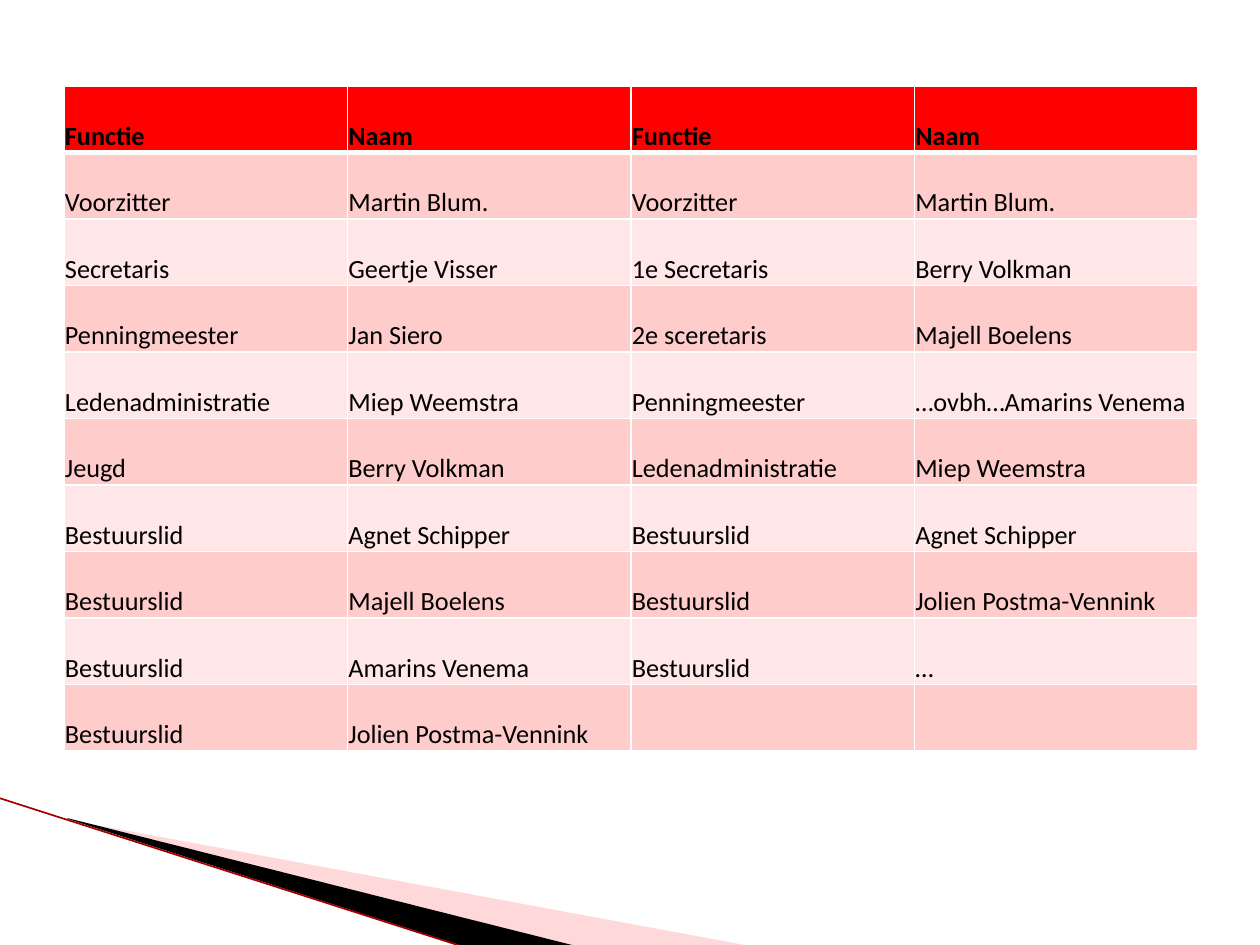
from lxml import etree
from pptx import Presentation
from pptx import util as u
from pptx.dml.color import RGBColor
from pptx.enum import shapes, text
from pptx.oxml import ns

PX = u.Inches(1) // 126
BLACK = RGBColor(0x00, 0x00, 0x00)
RED = RGBColor(0xFF, 0x00, 0x00)
ROSE = RGBColor(0xFF, 0xCC, 0xCC)
PALE_ROSE = RGBColor(0xFF, 0xE7, 0xE7)
WEDGE_PINK = RGBColor(0xFF, 0xA2, 0xA2)
DARK_RED = RGBColor(0xA5, 0x00, 0x00)

BOARD = [
    ("Functie", "Naam", "Functie", "Naam"),
    ("Voorzitter", "Martin Blum.", "Voorzitter", "Martin Blum."),
    ("Secretaris", "Geertje Visser", "1e Secretaris", "Berry Volkman"),
    ("Penningmeester", "Jan Siero", "2e sceretaris", "Majell Boelens"),
    ("Ledenadministratie", "Miep Weemstra", "Penningmeester", "…ovbh…Amarins Venema"),
    ("Jeugd", "Berry Volkman", "Ledenadministratie", "Miep Weemstra"),
    ("Bestuurslid", "Agnet Schipper", "Bestuurslid", "Agnet Schipper"),
    ("Bestuurslid", "Majell Boelens", "Bestuurslid", "Jolien Postma-Vennink"),
    ("Bestuurslid", "Amarins Venema", "Bestuurslid", "…"),
    ("Bestuurslid", "Jolien Postma-Vennink", "", ""),
]


def add_wedge(slide, points, color, opacity=100):
    builder = slide.shapes.build_freeform(*points[0], scale=PX)
    builder.add_line_segments(points[1:], close=True)
    wedge = builder.convert_to_shape()
    wedge.shadow.inherit = False
    wedge.line.fill.background()
    wedge.fill.solid()
    wedge.fill.fore_color.rgb = color
    if opacity < 100:
        tint = wedge.fill._xPr.find(".//" + ns.qn("a:srgbClr"))
        etree.SubElement(tint, ns.qn("a:alpha"), val=str(opacity * 1000))


def add_edge(slide, start, end, color, width):
    ends = [value * PX for value in (*start, *end)]
    edge = slide.shapes.add_connector(shapes.MSO_CONNECTOR.STRAIGHT, *ends)
    edge.line.color.rgb = color
    edge.line.width = u.Pt(width)
    etree.SubElement(edge._element.spPr, ns.qn("a:effectLst"))


def write(frame, words, *, size=15, font="Calibri", color=BLACK, bold=False):
    run = frame.paragraphs[0].add_run()
    run.text = words
    run.font.size = u.Pt(size)
    run.font.name = font
    run.font.color.rgb = color
    run.font.bold = bold


def set_borders(cell, top, bottom):
    """Draw white cell borders; the side borders are 1 pt wide."""
    properties = cell._tc.get_or_add_tcPr()
    widths = {"lnL": 1, "lnR": 1, "lnT": top, "lnB": bottom}
    for position, (side, width) in enumerate(widths.items()):
        border = etree.Element(ns.qn("a:" + side), w=str(u.Pt(width)))
        fill = etree.SubElement(border, ns.qn("a:solidFill"))
        etree.SubElement(fill, ns.qn("a:srgbClr"), val="FFFFFF")
        properties.insert(position, border)


def add_board_table(slide, left, top, width, height):
    frame = slide.shapes.add_table(len(BOARD), len(BOARD[0]), left * PX,
                                   top * PX, width * PX, height * PX)
    for row, entries in enumerate(BOARD):
        is_header = row == 0
        band = RED if is_header else ROSE if row % 2 else PALE_ROSE
        for column, entry in enumerate(entries):
            cell = frame.table.cell(row, column)
            cell.fill.solid()
            cell.fill.fore_color.rgb = band
            cell.margin_left = cell.margin_right = cell.margin_top = PX
            cell.margin_bottom = 0
            cell.vertical_anchor = text.MSO_ANCHOR.BOTTOM
            set_borders(cell, 3 if row == 1 else 1, 3 if is_header else 1)
            if entry:
                write(cell.text_frame, entry, bold=is_header)


def main():
    deck = Presentation()
    deck.slide_width, deck.slide_height = u.Inches(10), u.Inches(7.5)
    slide = deck.slides.add_slide(deck.slide_layouts[6])
    add_wedge(slide, [(69, 820), (750, 946), (575, 946), (69, 819)], WEDGE_PINK, 40)
    add_wedge(slide, [(67, 818), (576, 946), (469, 948), (68, 819)], BLACK)
    add_edge(slide, (-1, 798), (467, 948), DARK_RED, 0.95)
    add_board_table(slide, 64, 86, 1134, 665)
    deck.save("out.pptx")


if __name__ == "__main__":
    main()
